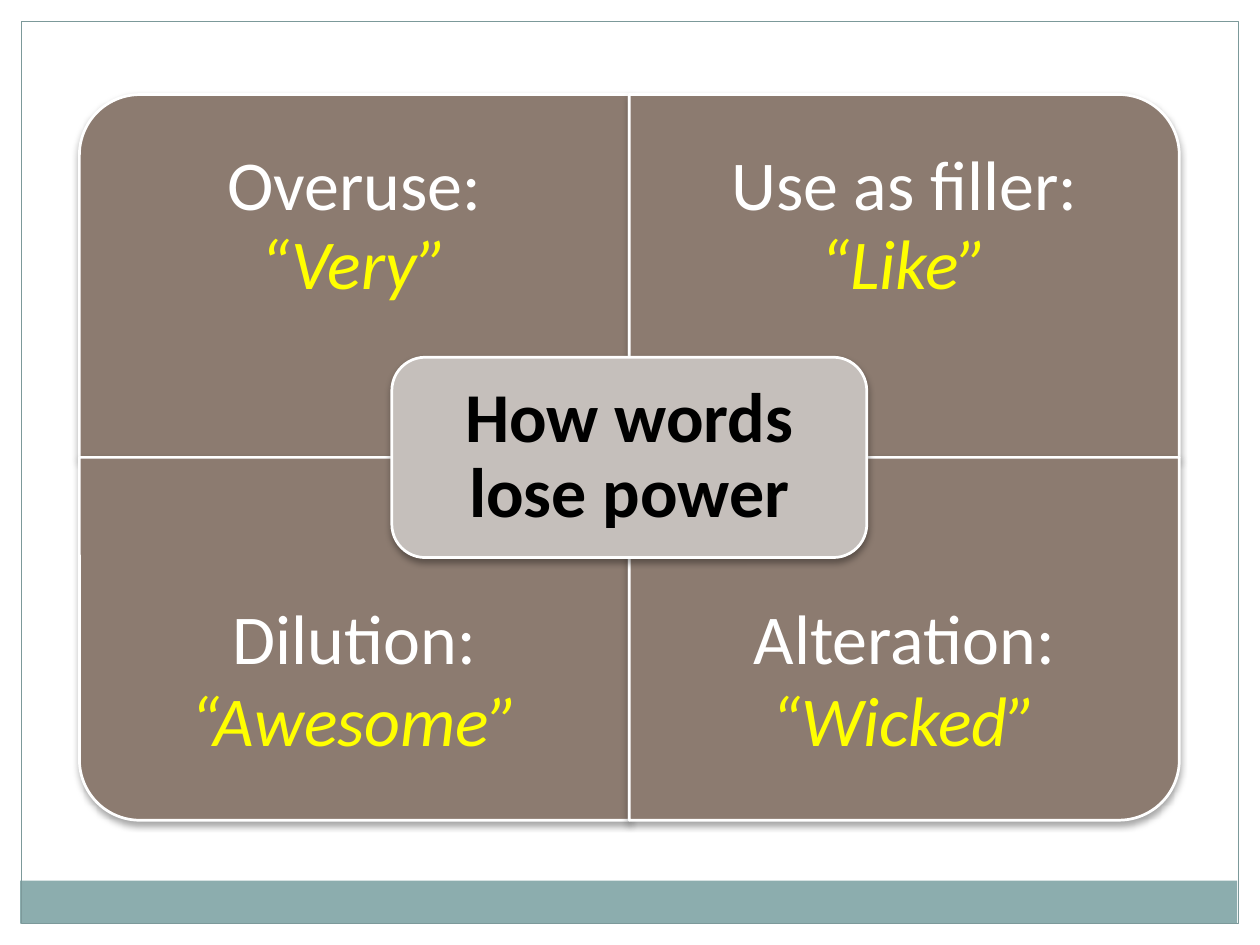
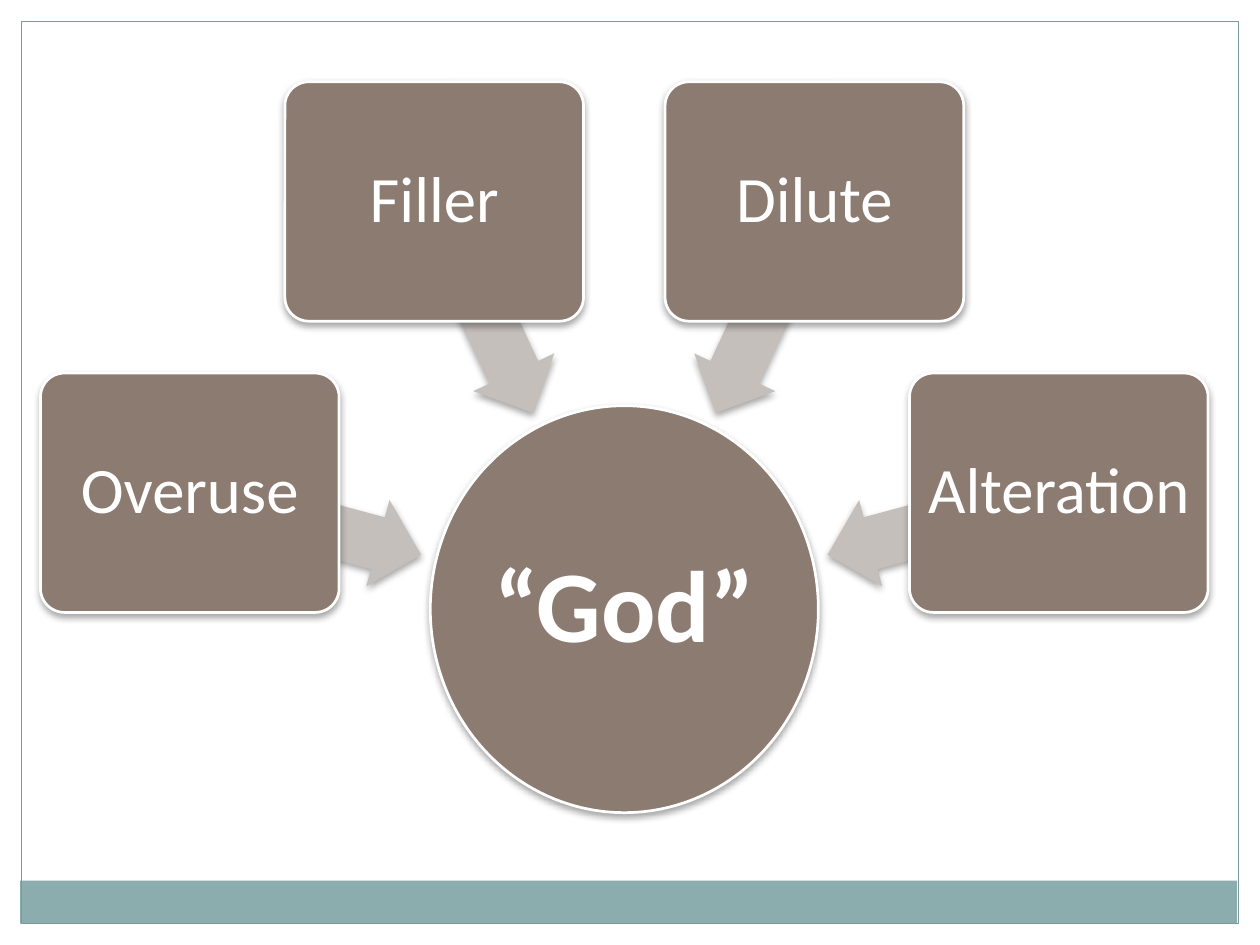
from dataclasses import dataclass
from itertools import product
from math import cos, radians, sin

from lxml.etree import SubElement
from pptx import Presentation
from pptx.dml.color import RGBColor
from pptx.enum.shapes import MSO_SHAPE
from pptx.enum.text import MSO_ANCHOR, PP_ALIGN
from pptx.oxml.ns import qn
from pptx.util import Inches, Pt


@dataclass(frozen=True)
class Theme:
    font: str = "Calibri"
    brown: str = "8C7B70"
    pale: str = "C5BFBB"
    teal: str = "8CADAE"
    frame: str = "7C999A"
    white: str = "FFFFFF"
    black: str = "000000"
    yellow: str = "FFFF00"
    quad_size: int = 40
    card_size: int = 37
    hub_size: int = 58
    outline: float = 1.57


T = Theme()


def rgb(color):
    return RGBColor.from_string(color)


def add_shadow(sp):
    effects = sp._element.spPr.find(qn("a:effectLst"))
    shadow = SubElement(effects, qn("a:outerShdw"), blurRad=str(Pt(4)),
                        dist=str(Pt(2)), dir="5400000", rotWithShape="0")
    color = SubElement(shadow, qn("a:srgbClr"), val=T.black)
    SubElement(color, qn("a:alpha"), val="35000")


def add_shape(s, kind, box, fill=None, line=None, width=T.outline, shadow=True):
    sp = s.shapes.add_shape(kind, *map(Inches, box))
    sp.shadow.inherit = False
    if fill:
        sp.fill.solid()
        sp.fill.fore_color.rgb = rgb(fill)
    else:
        sp.fill.background()
    if line:
        sp.line.color.rgb = rgb(line)
        sp.line.width = Pt(width)
    else:
        sp.line.fill.background()
    if shadow:
        add_shadow(sp)
    return sp


def set_text(sp, text, size, color, bold=False, italic=False, spacing=0.9,
             insets=(0.1, 0.05, 0.1, 0.05), anchor=MSO_ANCHOR.MIDDLE):
    tf = sp.text_frame
    tf.word_wrap = True
    tf.vertical_anchor = anchor
    tf.margin_left, tf.margin_top, tf.margin_right, tf.margin_bottom = map(Inches, insets)
    p = tf.paragraphs[0]
    p.text = text
    p.alignment = PP_ALIGN.CENTER
    p.line_spacing = spacing
    p.font.name = T.font
    p.font.size = Pt(size)
    p.font.bold = bold
    p.font.italic = italic
    p.font.color.rgb = rgb(color)


def add_text(s, box, *args, **style):
    set_text(s.shapes.add_textbox(*map(Inches, box)), *args, **style)


def add_frame(s):
    add_shape(s, MSO_SHAPE.RECTANGLE, (0.16, 6.99, 9.66, 0.34), T.teal, shadow=False)
    add_shape(s, MSO_SHAPE.RECTANGLE, (0.17, 0.17, 9.66, 7.16),
              line=T.frame, width=0.75, shadow=False)


def add_matrix(s, box, center, quadrants):
    x, y, w, h = box
    cw, ch = w / 2, h / 2
    cells = list(zip(product(range(2), repeat=2), (270, 0, 180, 90), quadrants))
    for (row, col), rotation, (heading, _) in cells:
        left, top = x + col * cw, y + row * ch
        sw, sh = (ch, cw) if rotation % 180 else (cw, ch)
        sp = add_shape(s, MSO_SHAPE.ROUND_1_RECTANGLE,
                       (left + (cw - sw) / 2, top + (ch - sh) / 2, sw, sh),
                       T.brown, T.white)
        sp.rotation = rotation
        add_text(s, (left, top + row * ch / 4, cw, ch * 0.75), heading,
                 T.quad_size, T.white, insets=(0.31, 0.31, 0.31, 0.98))

    mw, mh = 3.77, 1.59
    sp = add_shape(s, MSO_SHAPE.ROUNDED_RECTANGLE,
                   (x + (w - mw) / 2, y + (h - mh) / 2, mw, mh), T.pale, T.white)
    set_text(sp, center, T.quad_size, T.black, bold=True, insets=[0.17] * 4)

    for (row, col), _, (_, example) in cells:
        add_text(s, (x + col * cw, y + 0.94 + row * (ch + 0.75), cw, 0.77), example,
                 T.quad_size, T.yellow, italic=True, spacing=1, anchor=MSO_ANCHOR.TOP)


def add_converging(s, box, hub, causes):
    x, y, w, h = box
    hub_w, hub_h = 3.08, 3.23
    card_w, card_h, arrow_h = 2.37, 1.9, 0.71
    orbit = 3.57
    cx, cy = x + w / 2, y + h - hub_h / 2

    def around(angle, radius, width, height):
        return (cx + radius * cos(radians(angle)) - width / 2,
                cy + radius * sin(radians(angle)) - height / 2, width, height)

    sp = add_shape(s, MSO_SHAPE.OVAL, around(0, 0, hub_w, hub_h), T.brown, T.white)
    set_text(sp, hub, T.hub_size, T.white, bold=True, insets=[0.04] * 4)

    for angle, length, cause in zip(range(195, 360, 50), (1.9, 1.85, 1.85, 1.9), causes):
        arrow = add_shape(s, MSO_SHAPE.LEFT_ARROW,
                          around(angle, orbit - length / 2, length, arrow_h), T.pale)
        arrow.adjustments[0] = 0.6
        arrow.adjustments[1] = 0.5
        arrow.rotation = angle
        card = add_shape(s, MSO_SHAPE.ROUNDED_RECTANGLE,
                         around(angle, orbit, card_w, card_h), T.brown, T.white)
        card.adjustments[0] = 0.1
        set_text(card, cause, T.card_size, T.white, insets=[0.08] * 4)


def add_slide(prs):
    s = prs.slides.add_slide(prs.slide_layouts[6])
    add_frame(s)
    return s


def main():
    prs = Presentation()
    prs.slide_width, prs.slide_height = Inches(10), Inches(7.5)
    add_matrix(add_slide(prs), (0.63, 0.75, 8.73, 5.76), "How words lose power",
               (("Overuse:", "“Very”"), ("Use as filler:", "“Like”"),
                ("Dilution:", "“Awesome”"), ("Alteration:", "“Wicked”")))
    add_converging(add_slide(prs), (0.33, 0.66, 9.25, 5.79), "“God”",
                   ("Overuse", "Filler", "Dilute", "Alteration"))
    prs.save("out.pptx")


if __name__ == "__main__":
    main()
